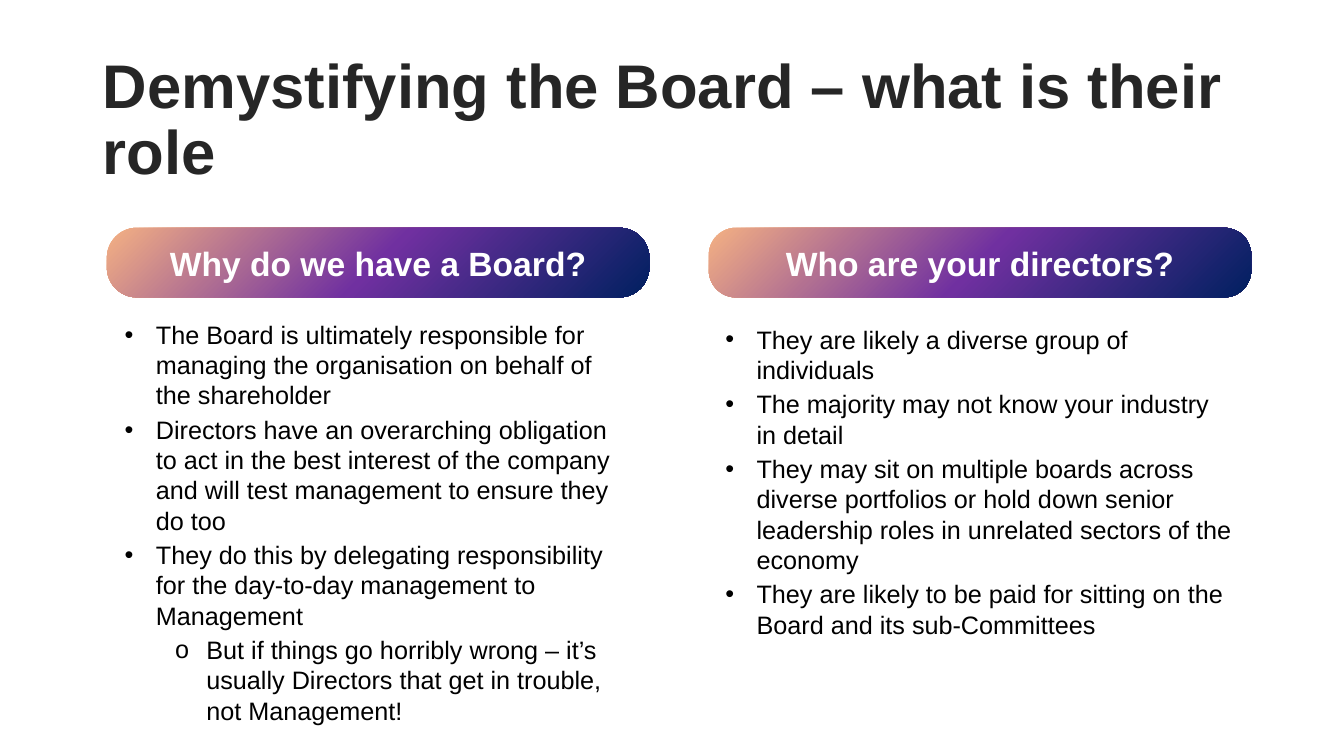
from copy import deepcopy
from dataclasses import dataclass

from lxml import etree
from pptx import Presentation
from pptx.dml.color import RGBColor
from pptx.enum.shapes import MSO_SHAPE
from pptx.enum.text import MSO_ANCHOR, MSO_AUTO_SIZE, PP_ALIGN
from pptx.oxml.ns import qn
from pptx.util import Pt

ROUND = MSO_SHAPE.ROUNDED_RECTANGLE
TOP, MIDDLE = MSO_ANCHOR.TOP, MSO_ANCHOR.MIDDLE
LEFT, CENTER = PP_ALIGN.LEFT, PP_ALIGN.CENTER
NO_FIT = MSO_AUTO_SIZE.NONE

PX = 9144  # EMU, 100 px to the inch
FONT = "Arial"
BLACK = RGBColor(0x00, 0x00, 0x00)
WHITE = RGBColor(0xFF, 0xFF, 0xFF)
DARK = RGBColor(0x26, 0x26, 0x26)
PEACH = RGBColor(0xF4, 0xB1, 0x83)
PURPLE = RGBColor(0x70, 0x30, 0xA0)
NAVY = RGBColor(0x00, 0x20, 0x60)

HANG, STEP = 31, 50
BULLETS = ("•", "o")


@dataclass
class Point:
    text: str
    level: int = 0


@dataclass
class Column:
    left: int
    head: str
    curve: float
    top: int
    bend: float
    points: list[Point]


COLUMNS = [
    Column(92, "Why do we have a Board?", 0.43, 290, 0.17, [
        Point("The Board is ultimately responsible for managing the "
              "organisation on behalf of the shareholder"),
        Point("Directors have an overarching obligation to act in the best "
              "interest of the company and will test management to ensure "
              "they do too"),
        Point("They do this by delegating responsibility for the day-to-day "
              "management to Management"),
        Point("But if things go horribly wrong – it’s usually Directors that "
              "get in trouble, not Management!", 1),
    ]),
    Column(689, "Who are your directors?", 0.39, 296, 0.16, [
        Point("They are likely a diverse group of individuals"),
        Point("The majority may not know your industry in detail"),
        Point("They may sit on multiple boards across diverse portfolios or "
              "hold down senior leadership roles in unrelated sectors of the "
              "economy"),
        Point("They are likely to be paid for sitting on the Board and its "
              "sub-Committees"),
    ]),
]


def add_run(para, text: str, size: int, color: RGBColor, bold: bool = False) -> None:
    run = para.add_run()
    run.text = text
    run.font.name = FONT
    run.font.size = Pt(size)
    run.font.bold = bold
    run.font.color.rgb = color


def add_box(slide, left: int, top: int, width: int, height: int, curve: float, anchor):
    """Add a rounded box with neither fill nor outline."""
    box = slide.shapes.add_shape(ROUND, left * PX, top * PX, width * PX, height * PX)
    box.adjustments[0] = curve
    box.shadow.inherit = False
    box.fill.background()
    box.line.fill.background()
    box.text_frame.word_wrap = True
    box.text_frame.vertical_anchor = anchor
    return box


def set_bullet(para, level: int) -> None:
    para.level = level
    props = para._p.get_or_add_pPr()
    props.set("marL", str((HANG + STEP * level) * PX))
    props.set("indent", str(-HANG * PX))
    etree.SubElement(props, qn("a:buFont"), typeface=FONT)
    etree.SubElement(props, qn("a:buChar"), char=BULLETS[level])


def set_blend(shape) -> None:
    """Fill the shape with the three-colour diagonal gradient."""
    shape.fill.gradient()
    shape.fill.gradient_angle = 315
    first = shape._element.spPr.find(".//" + qn("a:gs"))
    first.addnext(deepcopy(first))
    colors = (PEACH, PURPLE, NAVY)
    for i, (stop, color) in enumerate(zip(shape.fill.gradient_stops, colors)):
        stop.position = i / 2
        stop.color.rgb = color


def add_title(slide, text: str) -> None:
    title = slide.shapes.title
    title.left, title.top = 92 * PX, 48 * PX
    title.width, title.height = 1150 * PX, 145 * PX
    frame = title.text_frame
    frame.auto_size = NO_FIT
    frame.word_wrap = True
    frame.vertical_anchor = MIDDLE
    para = frame.paragraphs[0]
    para.alignment = LEFT
    para.line_spacing = 0.9
    add_run(para, text, 44, DARK, True)


def add_points(slide, col: Column) -> None:
    frame = add_box(slide, col.left, col.top, 566, 440, col.bend, TOP).text_frame
    for i, point in enumerate(col.points):
        para = frame.add_paragraph() if i else frame.paragraphs[0]
        para.alignment = LEFT
        para.space_after = Pt(3)
        set_bullet(para, point.level)
        add_run(para, point.text, 18, BLACK)


def add_head(slide, col: Column) -> None:
    head = add_box(slide, col.left + 14, 226, 538, 69, col.curve, MIDDLE)
    set_blend(head)
    para = head.text_frame.paragraphs[0]
    para.alignment = CENTER
    para.space_after = Pt(3)
    add_run(para, col.head, 24, WHITE, True)


def main() -> None:
    deck = Presentation()
    deck.slide_width, deck.slide_height = 1333 * PX, 750 * PX
    slide = deck.slides.add_slide(deck.slide_layouts[5])
    add_title(slide, "Demystifying the Board – what is their role")
    for col in COLUMNS:
        add_points(slide, col)
        add_head(slide, col)
    deck.save("out.pptx")


if __name__ == "__main__":
    main()
